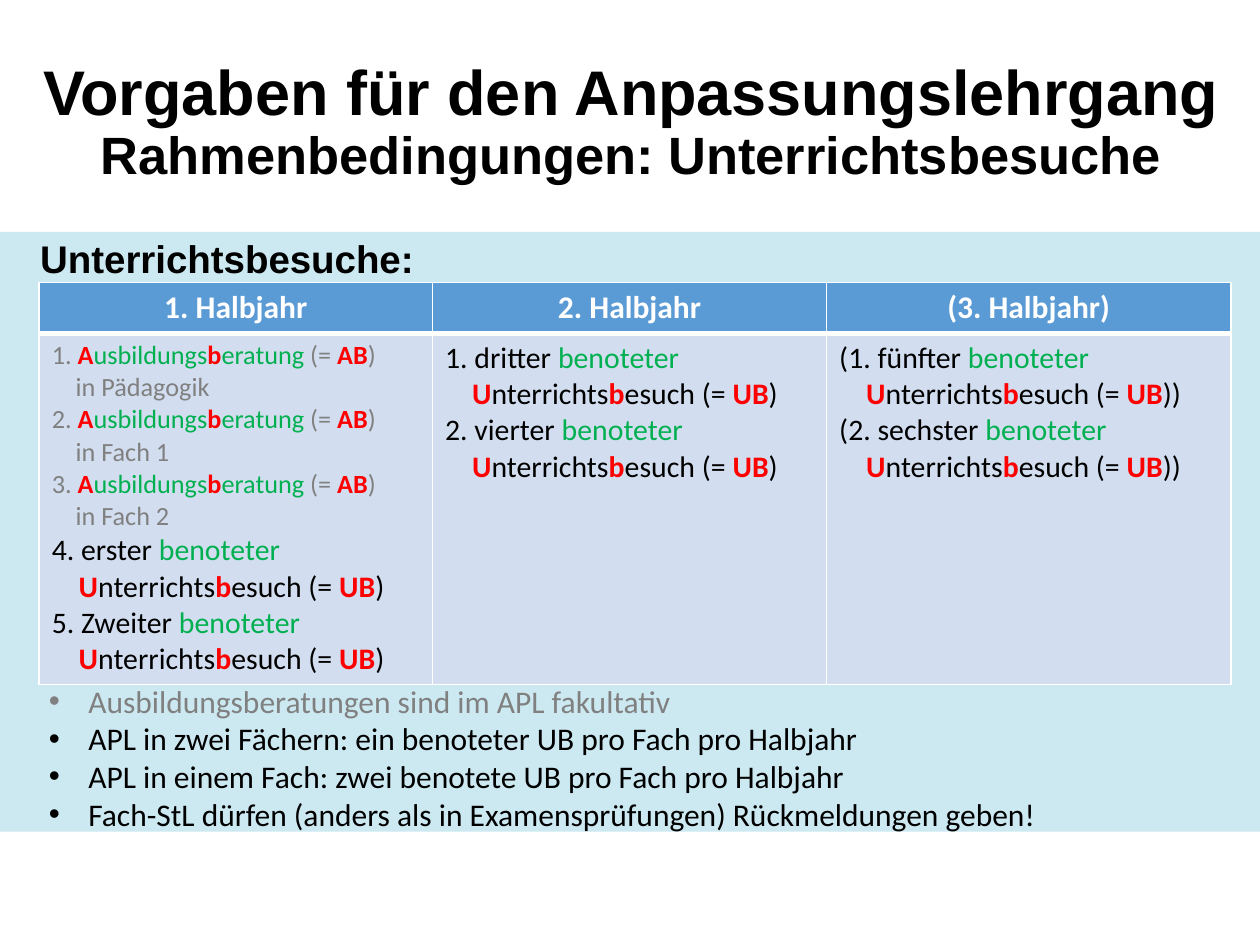
from dataclasses import dataclass
from typing import Optional

import pptx
import pptx.dml.color
import pptx.enum.shapes
import pptx.enum.text
import pptx.oxml
import pptx.oxml.ns
import pptx.oxml.xmlchemy
import pptx.util

Pt = pptx.util.Pt
ALIGN = pptx.enum.text.PP_ALIGN
ANCHOR = pptx.enum.text.MSO_ANCHOR


@dataclass(frozen=True)
class Theme:
    band: str = "CCE9F2"
    header: str = "5B9BD5"
    cell: str = "D2DEEF"
    white: str = "FFFFFF"
    black: str = "000000"
    grey: str = "808080"
    red: str = "FF0000"
    green: str = "00B050"
    heading_font: str = "Arial"
    text_font: str = "Calibri"
    title_size: float = 36
    subtitle_size: float = 30
    heading_size: float = 22
    text_size: float = 18
    visit_size: float = 17
    advice_size: float = 15


@dataclass(frozen=True)
class Line:
    """One paragraph; '|' separates runs, '*' marks red bold, '+' marks green."""
    text: str
    size: float
    color: str
    indent: float = 0


THEME = Theme()


def advice(number: int, subject: str) -> list[Line]:
    size, color = THEME.advice_size, THEME.grey
    return [Line(f"{number}. |*A|+usbildungs|*b|+eratung |(= |*AB|)", size, color),
            Line(f"in {subject}", size, color, indent=13.6)]


def visit(lead: str, closing: str = ")") -> list[Line]:
    size, color = THEME.visit_size, THEME.black
    return [Line(f"{lead} |+benoteter", size, color),
            Line(f"*U|nterrichts|*b|esuch (= |*UB|{closing}", size, color, indent=15.4)]


HALF_YEARS = {
    "1. Halbjahr": [*advice(1, "Pädagogik"), *advice(2, "Fach 1"), *advice(3, "Fach 2"),
                    *visit("4. erster"), *visit("5. Zweiter")],
    "2. Halbjahr": [*visit("1. dritter"), *visit("2. vierter")],
    "(3. Halbjahr)": [*visit("(1. fünfter", "))"), *visit("(2. sechster", "))")],
}
COLUMN_WIDTHS = (224.8, 225.2, 231)
ROW_HEIGHTS = (29.2, 200)
NOTES = [
    ("Ausbildungsberatungen sind im APL fakultativ", THEME.grey),
    ("APL in zwei Fächern: ein benoteter UB pro Fach pro Halbjahr", THEME.black),
    ("APL in einem Fach: zwei benotete UB pro Fach pro Halbjahr", THEME.black),
    ("Fach-StL dürfen (anders als in Examensprüfungen) Rückmeldungen geben!", THEME.black),
]


def rgb(color: str) -> pptx.dml.color.RGBColor:
    return pptx.dml.color.RGBColor.from_string(color)


def set_indent(paragraph, left: float, first: float = 0, bullet: Optional[str] = None) -> None:
    properties = paragraph._p.get_or_add_pPr()
    properties.set("marL", str(int(Pt(left))))
    properties.set("indent", str(int(Pt(first))))
    mark = pptx.oxml.xmlchemy.OxmlElement("a:buChar" if bullet else "a:buNone")
    if bullet:
        font = pptx.oxml.xmlchemy.OxmlElement("a:buFont")
        font.set("typeface", "Arial")
        properties.append(font)
        mark.set("char", bullet)
    properties.append(mark)


def write(paragraph, text: str, *, size: float, color: str = THEME.black,
          font: str = THEME.text_font, bold: bool = False, align=None,
          spacing: Optional[float] = None) -> None:
    if align is not None:
        paragraph.alignment = align
    if spacing is not None:
        paragraph.line_spacing = spacing
    accents = {"*": (THEME.red, True), "+": (THEME.green, False)}
    for part in text.split("|"):
        run_color, run_bold = accents.get(part[0], (color, bold))
        run = paragraph.add_run()
        run.text = part[1:] if part[0] in accents else part
        run.font.name = font
        run.font.size = Pt(size)
        run.font.bold = run_bold
        run.font.color.rgb = rgb(run_color)


def next_paragraph(frame, index: int):
    return frame.add_paragraph() if index else frame.paragraphs[0]


def place(shape, left: float, top: float, width: float, height: float) -> None:
    shape.left, shape.top, shape.width, shape.height = map(Pt, (left, top, width, height))
    shape.text_frame.auto_size = pptx.enum.text.MSO_AUTO_SIZE.NONE


def style_cell(cell, fill: str, top: float = 1, bottom: float = 1) -> None:
    cell.fill.solid()
    cell.fill.fore_color.rgb = rgb(fill)
    properties = cell._tc.get_or_add_tcPr()
    for position, (side, width) in enumerate(
            {"L": 1, "R": 1, "T": top, "B": bottom}.items()):
        properties.insert(position, pptx.oxml.parse_xml(
            f'<a:ln{side} {pptx.oxml.ns.nsdecls("a")} w="{int(Pt(width))}"><a:solidFill>'
            f'<a:srgbClr val="{THEME.white}"/></a:solidFill></a:ln{side}>'))


def draw_band(slide) -> None:
    band = slide.shapes.add_shape(pptx.enum.shapes.MSO_SHAPE.RECTANGLE,
                                  Pt(0), Pt(132.5), Pt(720), Pt(342.7))
    band.shadow.inherit = False
    band.fill.solid()
    band.fill.fore_color.rgb = rgb(THEME.band)
    band.line.fill.background()
    band._element.getparent().insert(2, band._element)  # behind the placeholders


def draw_headings(slide) -> None:
    title, body = slide.shapes.title, slide.placeholders[1]
    place(title, 15.8, 18, 689.8, 105.1)
    title.text_frame.vertical_anchor = ANCHOR.MIDDLE
    heading = title.text_frame.paragraphs[0]
    style = dict(font=THEME.heading_font, bold=True, spacing=0.9)
    write(heading, "Vorgaben für den Anpassungslehrgang", size=THEME.title_size,
          align=ALIGN.CENTER, **style)
    heading.add_line_break()
    write(heading, "Rahmenbedingungen: Unterrichtsbesuche", size=THEME.subtitle_size, **style)

    place(body, 15.8, 133.9, 689.8, 341.3)
    subject = body.text_frame.paragraphs[0]
    set_indent(subject, 0)
    subject.space_before = Pt(0)
    write(subject, "Unterrichtsbesuche:", size=THEME.heading_size, **style)


def draw_schedule(slide) -> None:
    schedule = slide.shapes.add_table(2, len(HALF_YEARS), Pt(22.4), Pt(161.3),
                                      Pt(sum(COLUMN_WIDTHS)), Pt(sum(ROW_HEIGHTS))).table
    for row, height in zip(schedule.rows, ROW_HEIGHTS):
        row.height = Pt(height)
    for column, (half_year, lines) in enumerate(HALF_YEARS.items()):
        schedule.columns[column].width = Pt(COLUMN_WIDTHS[column])
        header, content = schedule.cell(0, column), schedule.cell(1, column)
        style_cell(header, THEME.header, bottom=3)
        style_cell(content, THEME.cell, top=3)
        write(header.text_frame.paragraphs[0], half_year, size=THEME.text_size,
              color=THEME.white, bold=True, align=ALIGN.CENTER)
        for index, line in enumerate(lines):
            paragraph = next_paragraph(content.text_frame, index)
            set_indent(paragraph, line.indent)
            write(paragraph, line.text, size=line.size, color=line.color)


def draw_notes(slide) -> None:
    notes = slide.shapes.add_textbox(Pt(20.9), Pt(385.9), Pt(676), Pt(94.3))
    notes.text_frame.word_wrap = True
    for index, (text, color) in enumerate(NOTES):
        paragraph = next_paragraph(notes.text_frame, index)
        set_indent(paragraph, 22.5, -22.5, bullet="•")
        write(paragraph, text, size=THEME.text_size, color=color)


def main() -> None:
    deck = pptx.Presentation()
    deck.slide_width, deck.slide_height = Pt(720), Pt(540)
    slide = deck.slides.add_slide(deck.slide_layouts[1])
    # Background band and headings
    draw_band(slide)
    draw_headings(slide)
    # Visits per half-year and the rules below
    draw_schedule(slide)
    draw_notes(slide)
    deck.save("out.pptx")


if __name__ == "__main__":
    main()
